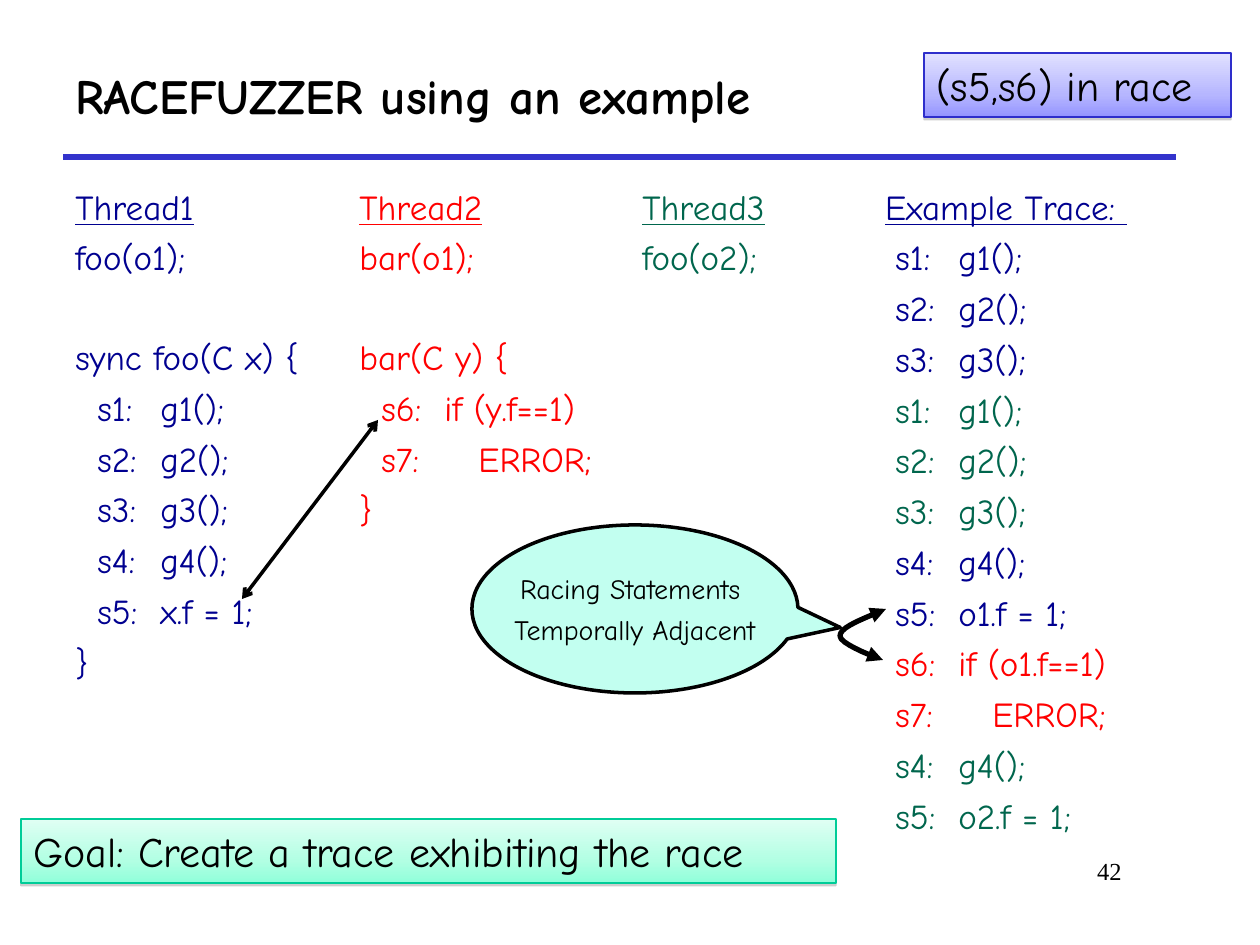
from copy import deepcopy

from lxml.etree import SubElement
from pptx import Presentation
from pptx.dml.color import RGBColor
from pptx.enum.shapes import MSO_CONNECTOR, MSO_SHAPE
from pptx.enum.text import MSO_ANCHOR, PP_ALIGN
from pptx.oxml.ns import qn
from pptx.util import Pt

SCALE = 914400 / 126
FONT = "Comic Neue"
BLACK, NAVY, RED, GREEN = "000000", "000090", "FF0000", "00664D"
TABS = (22, 85, 119)


def px(num):
    """Turn pixels into EMU."""
    return round(num * SCALE)


def tint(code):
    """Turn a hex string into a colour."""
    return RGBColor.from_string(code)


def add_run(para, text, size, color=BLACK, font=FONT, bold=False, under=False):
    """Add one styled run to a paragraph."""
    run = para.add_run()
    run.text = text
    face = run.font
    face.name, face.size, face.bold, face.underline = font, Pt(size), bold, under
    face.color.rgb = tint(color)


def add_box(slide, box, anchor=MSO_ANCHOR.TOP):
    """Add a wrapping text box and return its frame."""
    frame = slide.shapes.add_textbox(*map(px, box)).text_frame
    frame.word_wrap = True
    frame.vertical_anchor = anchor
    return frame


def add_code(slide, box, rows):
    """Add a column of code under an underlined head; None leaves a gap."""
    frame = add_box(slide, box)
    para, gap = frame.paragraphs[0], 0
    for spot, row in enumerate(rows):
        if row is None:
            gap = 28
            continue
        if spot:
            para = frame.add_paragraph()
            para.space_before = Pt(5 + gap)
            gap = 0
        stops = SubElement(para._p.get_or_add_pPr(), qn("a:tabLst"))
        for stop in TABS:
            SubElement(stops, qn("a:tab"), pos=str(px(stop)), algn="l")
        text, color = row
        if text.startswith(" "):
            add_run(para, " ", 20, color)
            text = text[1:]
        add_run(para, text, 20, color, under=not spot)


def add_ends(shape, kind):
    """Put arrowheads on both ends of a line."""
    line = shape.line._get_or_add_ln()
    for end in ("a:headEnd", "a:tailEnd"):
        SubElement(line, qn(end), type=kind)


def add_line(slide, ends, color, width):
    """Add a straight line without a shadow."""
    line = slide.shapes.add_connector(MSO_CONNECTOR.STRAIGHT, *map(px, ends))
    line.line.color.rgb = tint(color)
    line.line.width = Pt(width)
    SubElement(line._element.spPr, qn("a:effectLst"))
    return line


def add_shape(slide, kind, box, edge, width):
    """Add a preset shape with an outline and no shadow."""
    shape = slide.shapes.add_shape(kind, *map(px, box))
    shape.shadow.inherit = False
    shape.line.color.rgb = tint(edge)
    shape.line.width = Pt(width)
    return shape


def add_sign(slide, box, text, shades, edge):
    """Add a shaded sign with a soft shadow."""
    sign = add_shape(slide, MSO_SHAPE.RECTANGLE, box, edge, 0.75)
    sign.fill.gradient()
    sign.fill.gradient_angle = 270
    props = sign._element.spPr
    stops = props.find(".//" + qn("a:gsLst"))
    stops.insert(1, deepcopy(stops[0]))
    for stop, place, shade in zip(sign.fill.gradient_stops, (0, 0.65, 1), shades):
        stop.position = place
        stop.color.rgb = tint(shade)
    cast = SubElement(props.find(qn("a:effectLst")), qn("a:outerShdw"),
                      dist=str(Pt(1.6)), dir="5400000", rotWithShape="0")
    color = SubElement(cast, qn("a:srgbClr"), val="808080")
    SubElement(color, qn("a:alpha"), val="38000")
    para = sign.text_frame.paragraphs[0]
    para.alignment = PP_ALIGN.LEFT
    add_run(para, text, 24)


def add_call(slide, box, tail, rows):
    """Add an oval callout with centred rows."""
    call = add_shape(slide, MSO_SHAPE.OVAL_CALLOUT, box, BLACK, 2)
    call.fill.solid()
    call.fill.fore_color.rgb = tint("C2FFF0")
    call.adjustments[0], call.adjustments[1] = tail
    frame = call.text_frame
    frame.word_wrap = False
    for spot, row in enumerate(rows):
        para = frame.add_paragraph() if spot else frame.paragraphs[0]
        para.alignment = PP_ALIGN.CENTER
        para.space_before = Pt(4)
        add_run(para, row, 16)


def bend(knots, steps=10):
    """Return points along one cubic curve."""
    points = []
    for step in range(steps + 1):
        t = step / steps
        parts = ((1 - t) ** 3, 3 * t * (1 - t) ** 2, 3 * t * t * (1 - t), t ** 3)
        points.append(tuple(px(sum(w * k[axis] for w, k in zip(parts, knots)))
                            for axis in (0, 1)))
    return points


def add_curve(slide, knots):
    """Add an open curve through joined cubic pieces."""
    points = bend(knots[:4]) + bend(knots[3:])[1:]
    form = slide.shapes.build_freeform(*points[0], scale=1.0)
    form.add_line_segments(points[1:], close=False)
    curve = form.convert_to_shape()
    curve.shadow.inherit = False
    curve.fill.background()
    curve.line.color.rgb = tint(BLACK)
    curve.line.width = Pt(3)
    add_ends(curve, "triangle")


def steps(color, first, last):
    """Return the rows for a run of g calls."""
    return [(f"\ts{n}:\tg{n}();", color) for n in range(first, last + 1)]


def main():
    """Build the slide."""
    deck = Presentation()
    deck.slide_width, deck.slide_height = px(1260), px(945)
    slide = deck.slides.add_slide(deck.slide_layouts[6])

    add_line(slide, (63, 157, 1176, 157), "3333CC", 3)
    title = add_box(slide, (63, 42, 1113, 105), MSO_ANCHOR.MIDDLE)
    add_run(title.paragraphs[0], "RACEFUZZER using an example", 28, bold=True)

    fail = ("\ts7:\t\tERROR;", RED)
    add_code(slide, (63, 179, 305, 651), [
        ("Thread1", NAVY), ("foo(o1);", NAVY), None, ("sync foo(C x) {", NAVY),
        *steps(NAVY, 1, 4), ("\ts5:\tx.f = 1;", NAVY), ("}", NAVY)])
    add_code(slide, (347, 179, 399, 651), [
        ("Thread2", RED), ("bar(o1);", RED), None, ("bar(C y) {", RED),
        ("\ts6:\tif (y.f==1)", RED), fail, ("}", RED)])
    add_code(slide, (630, 179, 231, 651), [
        ("Thread3", GREEN), ("foo(o2);", GREEN)])
    add_code(slide, (861, 179, 305, 651), [
        (" Example Trace: ", NAVY), *steps(NAVY, 1, 3), *steps(GREEN, 1, 3),
        *steps(NAVY, 4, 4), ("\ts5:\to1.f = 1;", NAVY),
        ("\ts6:\tif (o1.f==1)", RED), fail,
        *steps(GREEN, 4, 4), ("\ts5:\to2.f = 1;", GREEN)])

    page = add_box(slide, (872, 850, 262, 63)).paragraphs[0]
    page.alignment = PP_ALIGN.RIGHT
    add_run(page, "42", 14, font="Times New Roman")

    add_ends(add_line(slide, (242, 599, 378, 420), BLACK, 2), "arrow")
    add_curve(slide, [(886, 609), (863, 619), (840, 627), (840, 636),
                      (840, 645), (883, 660), (883, 660)])
    add_call(slide, (472, 525, 326, 168), (0.63, 0.11),
             ("Racing Statements ", "Temporally Adjacent"))
    add_sign(slide, (924, 53, 307, 64), "(s5,s6) in race",
             ("E1E1FF", "B6B6FF", "9595FF"), "2E2ECB")
    add_sign(slide, (21, 819, 815, 64), "Goal: Create a trace exhibiting the race",
             ("E0FFF4", "B2FFE3", "90FFDA"), "00CC98")
    deck.save("out.pptx")


if __name__ == "__main__":
    main()
